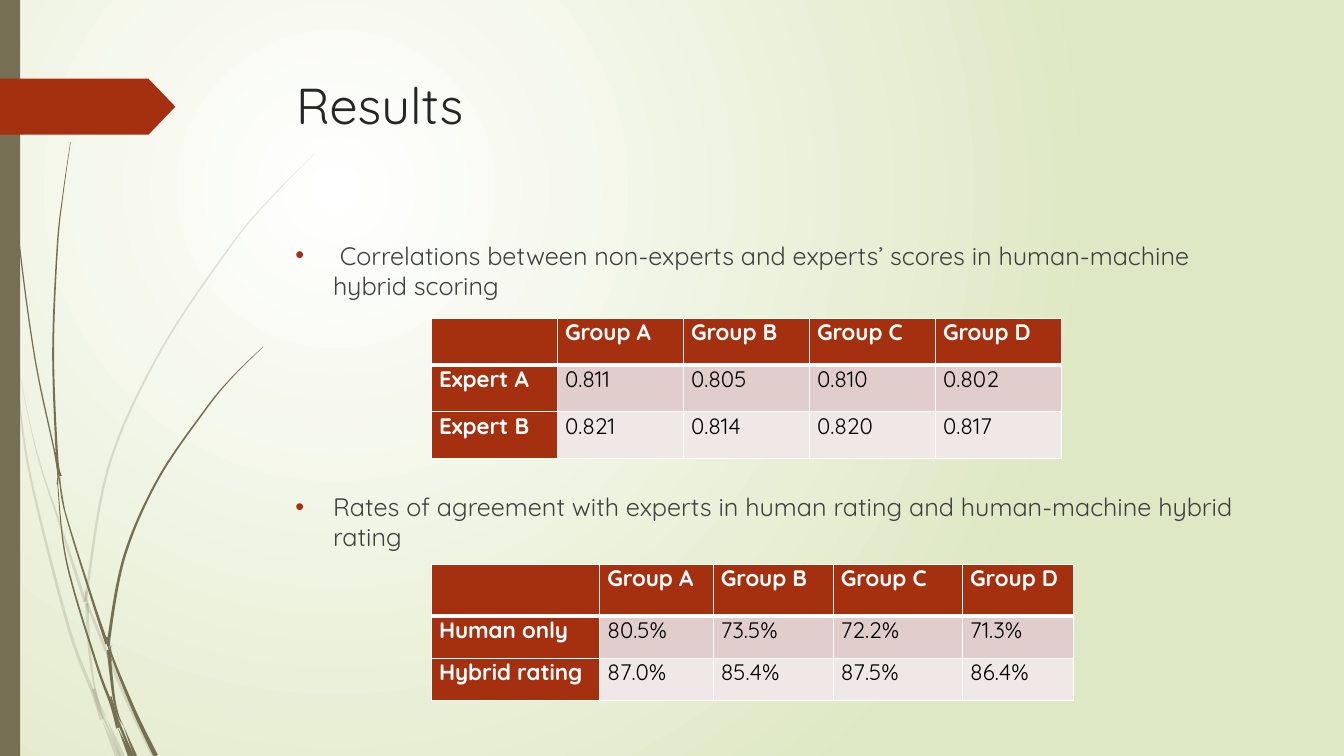
import dataclasses

import lxml.etree
import pptx
import pptx.dml.color
import pptx.enum.shapes
import pptx.enum.text
import pptx.oxml
import pptx.oxml.ns
import pptx.util

Pt = pptx.util.Pt
qn = pptx.oxml.ns.qn


@dataclasses.dataclass(frozen=True)
class Theme:
    font: str = "Quicksand"
    title_size: int = 36
    body_size: int = 18
    table_size: int = 16
    title: str = "262626"
    body: str = "404040"
    value: str = "000000"
    white: str = "FFFFFF"
    accent: str = "A53010"
    olive: str = "766F54"
    backdrop: str = "DFE8C4"
    bands: tuple = ("E1CDCC", "F0E8E7")


THEME = Theme()

# Grass blades: width at the tip, width at the root, centre line (points)
PALE_BLADES = [
    (2.5, 0, [(0, 209), (6.5, 240), (8, 252)]),
    (0, 2.2, [(10, 248), (26, 322), (43, 375), (60.8, 430)]),
    (1, 3.3, [(63.5, 431), (65, 438), (90, 498.5), (110, 540)]),
    (0, 3.3, [(75.6, 512), (87.5, 540)]),
    (0.5, 3, [(8, 252), (12, 271), (21.2, 338), (48.5, 446.5), (66.5, 495), (72.7, 514)]),
    (0, 3.4, [(72.7, 514), (83.9, 540)]),
    (0.3, 2.2, [(224.5, 110), (193, 142), (164.5, 176), (114.5, 251), (78, 332),
                (62.3, 420.5), (62.3, 429)]),
    (2.5, 0.5, [(62, 431), (64, 465), (68.5, 495), (75.6, 512)]),
    (2, 1, [(61.5, 422), (61.9, 430), (63.3, 438)]),
    (3, 1, [(67, 492), (71, 506), (74.2, 513), (85.7, 540)]),
]
DARK_BLADES = [
    (0.7, 1, [(2.5, 0), (3.2, 35), (5.4, 79), (13, 167), (25, 256), (40, 328), (41, 346)]),
    (0, 2.3, [(43.2, 340), (45.5, 362), (65, 425.5), (76.4, 460)]),
    (0.5, 3.3, [(79.2, 461.5), (80.5, 470), (96.5, 509), (111.3, 540)]),
    (0.5, 2.5, [(41, 343.5), (47.5, 401), (68.8, 473.8), (79.6, 503.5), (84.2, 520)]),
    (0.3, 2, [(50.4, 101.5), (45, 139), (41, 176.4), (38, 251), (40.7, 324.8), (43.2, 340)]),
    (0, 2.2, [(87.8, 517.7), (96.8, 540)]),
    (1.5, 0.5, [(39.6, 323), (41.8, 339), (46, 363.6)]),
    (0.3, 2.5, [(188, 247.7), (166.3, 269), (147.2, 292), (113, 342), (89, 397),
                (78, 455), (79.2, 461.5)]),
    (0, 2.9, [(84.2, 520), (92.9, 540)]),
    (2.5, 0.3, [(77.5, 464.4), (81.2, 497), (84.5, 511), (87.8, 517.7)]),
    (1.5, 0.5, [(76.5, 455), (78, 464), (79.7, 472)]),
    (1, 2, [(79.2, 497.5), (83.5, 512), (86, 519), (94.7, 540)]),
]


def rgb(value):
    return pptx.dml.color.RGBColor.from_string(value)


def write_text(paragraph, text, size, color, bold=False, align=None, space_before=0):
    run = paragraph.add_run()
    run.text = text
    run.font.name = THEME.font
    run.font.size = Pt(size)
    run.font.bold = bold
    run.font.color.rgb = rgb(color)
    paragraph.alignment = align
    paragraph.space_before = Pt(space_before)


def paint(shape, color, opacity=100):
    shape.shadow.inherit = False
    shape.fill.solid()
    shape.fill.fore_color.rgb = rgb(color)
    shape.line.fill.background()
    if opacity < 100:
        tint = shape.fill._xPr.find(qn("a:solidFill"))[0]
        lxml.etree.SubElement(tint, qn("a:alpha"), val=str(opacity * 1000))


def add_text_box(slide, box):
    frame = slide.shapes.add_textbox(*map(Pt, box)).text_frame
    frame.word_wrap = True
    return frame


def curve_edges(shape, count):
    """Turn the two long edges, of count corners each, into smooth cubic curves."""
    outline = shape._element.find(".//" + qn("a:path"))
    corners = [(int(p.get("x")), int(p.get("y"))) for p in outline.iter(qn("a:pt"))][:2 * count]
    lines = outline.findall(qn("a:lnTo"))
    for start in (0, count):
        edge = corners[start:start + count]
        padded = [edge[0], *edge, edge[-1]]
        for i in range(count - 1):
            before, a, b, after = padded[i:i + 4]
            first = [p + (q - o) / 6 for o, p, q in zip(before, a, b)]
            second = [q - (r - p) / 6 for p, q, r in zip(a, b, after)]
            curve = lxml.etree.Element(qn("a:cubicBezTo"))
            for x, y in (first, second, b):
                lxml.etree.SubElement(curve, qn("a:pt"), x=str(round(x)), y=str(round(y)))
            outline.replace(lines[start + i], curve)


def add_blade(slide, points, tip_width, root_width, color, opacity):
    last = len(points) - 1
    left, right = [], []
    for index, (x, y) in enumerate(points):
        x0, y0 = points[max(index - 1, 0)]
        x1, y1 = points[min(index + 1, last)]
        length = ((x1 - x0) ** 2 + (y1 - y0) ** 2) ** 0.5
        half = (tip_width + (root_width - tip_width) * index / last) / 2
        across, down = half * (y1 - y0) / length, half * (x1 - x0) / length
        left.append((Pt(x - across), Pt(y + down)))
        right.append((Pt(x + across), Pt(y - down)))
    builder = slide.shapes.build_freeform(*left[0])
    builder.add_line_segments(left[1:] + right[::-1], close=True)
    shape = builder.convert_to_shape()
    curve_edges(shape, len(points))
    paint(shape, color, opacity)


def add_background(slide):
    fill = slide.background.fill
    fill.gradient()
    for stop, color in zip(fill.gradient_stops, (THEME.white, THEME.backdrop)):
        stop.color.rgb = rgb(color)
    first, second = fill.gradient_stops
    first.position, second.position = 0, 1
    linear = slide.element.find(".//" + qn("a:lin"))
    circle = pptx.oxml.parse_xml(
        f'<a:path {pptx.oxml.ns.nsdecls("a")} path="circle">'
        '<a:fillToRect l="50000" t="50000" r="100000" b="100000"/></a:path>')
    linear.getparent().replace(linear, circle)


def add_decoration(slide, box):
    left, top, width, height = box
    for blades, opacity in ((PALE_BLADES, 20), (DARK_BLADES, 100)):
        for tip_width, root_width, points in blades:
            placed = [(left + x, top + y) for x, y in points]
            add_blade(slide, placed, tip_width, root_width, THEME.olive, opacity)
    kinds = pptx.enum.shapes.MSO_SHAPE
    sidebar = slide.shapes.add_shape(kinds.RECTANGLE, Pt(left), Pt(top), Pt(14.4), Pt(height))
    paint(sidebar, THEME.olive)
    marker = slide.shapes.add_shape(kinds.PENTAGON, Pt(left), Pt(top + 56.2), Pt(width), Pt(40))
    marker.adjustments[0] = 0.48
    paint(marker, THEME.accent)


def add_title(slide, box, text):
    write_text(add_text_box(slide, box).paragraphs[0], text, THEME.title_size, THEME.title)


def add_bullets(slide, box, texts, gap):
    frame = add_text_box(slide, box)
    for index, text in enumerate(texts):
        paragraph = frame.add_paragraph() if index else frame.paragraphs[0]
        write_text(paragraph, text, THEME.body_size, THEME.body, space_before=gap * index)
        properties = paragraph._p.get_or_add_pPr()
        properties.set("marL", str(Pt(27)))
        properties.set("indent", str(Pt(-27)))
        color = lxml.etree.SubElement(properties, qn("a:buClr"))
        lxml.etree.SubElement(color, qn("a:srgbClr"), val=THEME.accent)
        lxml.etree.SubElement(properties, qn("a:buFont"), typeface="Arial")
        lxml.etree.SubElement(properties, qn("a:buChar"), char="•")


def set_borders(cell, top, bottom):
    properties = cell._tc.get_or_add_tcPr()
    for side, width in (("L", 1), ("R", 1), ("T", top), ("B", bottom)):
        line = lxml.etree.SubElement(properties, qn(f"a:ln{side}"), w=str(Pt(width)))
        fill = lxml.etree.SubElement(line, qn("a:solidFill"))
        lxml.etree.SubElement(fill, qn("a:srgbClr"), val=THEME.white)


def add_score_table(slide, box, rows, column_widths, row_heights):
    table = slide.shapes.add_table(len(rows), len(rows[0]), *map(Pt, box)).table
    for column, width in zip(table.columns, column_widths):
        column.width = Pt(width)
    for row, height in zip(table.rows, row_heights):
        row.height = Pt(height)
    for r, values in enumerate(rows):
        for c, value in enumerate(values):
            cell = table.cell(r, c)
            heading = r == 0 or c == 0
            set_borders(cell, top=3 if r == 1 else 1, bottom=3 if r == 0 else 1)
            cell.fill.solid()
            cell.fill.fore_color.rgb = rgb(THEME.accent if heading else THEME.bands[r - 1])
            cell.margin_left = cell.margin_right = Pt(5.4)
            cell.margin_top = cell.margin_bottom = 0
            if value:
                write_text(cell.text_frame.paragraphs[0], value, THEME.table_size,
                           THEME.white if heading else THEME.value, bold=heading,
                           align=pptx.enum.text.PP_ALIGN.JUSTIFY)


def build_results_slide(presentation):
    slide = presentation.slides.add_slide(presentation.slide_layouts[6])
    add_background(slide)
    add_decoration(slide, (0, 0, 125.3, 540))
    add_title(slide, (204.5, 49.3, 702, 101), "Results")
    add_bullets(slide, (203.8, 167.8, 702, 297), [
        " Correlations between non-experts and experts’ scores in human-machine hybrid scoring",
        "Rates of agreement with experts in human rating and human-machine hybrid rating",
    ], gap=136.5)
    groups = ["", "Group A", "Group B", "Group C", "Group D"]
    add_score_table(slide, (308.2, 227.5, 450, 100), [
        groups,
        ["Expert A", "0.811", "0.805", "0.810", "0.802"],
        ["Expert B", "0.821", "0.814", "0.820", "0.817"],
    ], [90] * 5, [33.3] * 3)
    add_score_table(slide, (308.2, 403.2, 458.6, 97), [
        groups,
        ["Human only", "80.5%", "73.5%", "72.2%", "71.3%"],
        ["Hybrid rating", "87.0%", "85.4%", "87.5%", "86.4%"],
    ], [120.3, 81, 85.8, 92.4, 79.1], [37, 30, 30])


def main():
    presentation = pptx.Presentation()
    presentation.slide_width, presentation.slide_height = Pt(960), Pt(540)
    build_results_slide(presentation)
    presentation.save("out.pptx")


if __name__ == "__main__":
    main()
